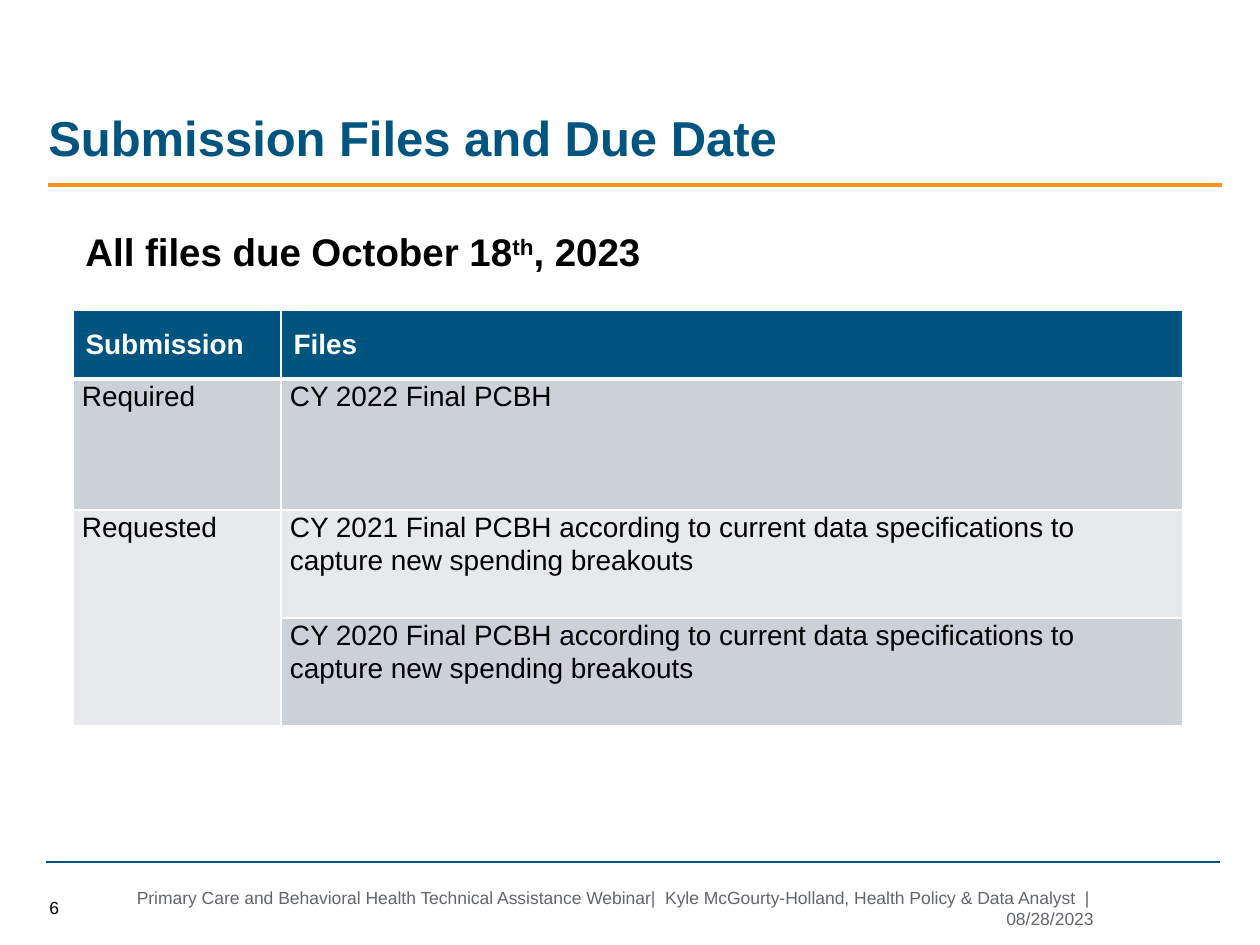
from dataclasses import dataclass

from lxml import etree
from pptx import Presentation
from pptx.dml.color import RGBColor
from pptx.enum.shapes import MSO_CONNECTOR
from pptx.enum.text import MSO_ANCHOR, PP_ALIGN
from pptx.oxml.ns import qn
from pptx.util import Emu, Pt

STRAIGHT = MSO_CONNECTOR.STRAIGHT
TOP, MIDDLE, BOTTOM = MSO_ANCHOR.TOP, MSO_ANCHOR.MIDDLE, MSO_ANCHOR.BOTTOM
LEFT, RIGHT = PP_ALIGN.LEFT, PP_ALIGN.RIGHT


@dataclass(frozen=True)
class Theme:
    font: str = "Arial"
    navy: str = "005480"
    orange: str = "F7921E"
    black: str = "000000"
    white: str = "FFFFFF"
    gray: str = "63666A"
    dark_band: str = "CCD1D8"
    light_band: str = "E7E9ED"
    title_size: int = 28
    due_size: int = 22
    table_size: int = 16
    footer_size: int = 10


THEME = Theme()

HEADERS = ["Submission", "Files"]
FILES = [
    ("Required", "CY 2022 Final PCBH"),
    ("Requested", "CY 2021 Final PCBH according to current data specifications "
                  "to capture new spending breakouts"),
    ("", "CY 2020 Final PCBH according to current data specifications "
         "to capture new spending breakouts"),
]
COLUMN_WIDTHS = [208, 902]
ROW_HEIGHTS = [69, 131, 108, 108]


def px(length):
    return Emu(round(length * 914400 / 126))


def style(paragraph, size, color, bold=False):
    font = paragraph.font
    font.name = THEME.font
    font.size = Pt(size)
    font.bold = bold
    font.color.rgb = RGBColor.from_string(color)


def add_text(slide, box, text, size, color, bold=False, anchor=TOP, align=LEFT):
    frame = slide.shapes.add_textbox(*map(px, box)).text_frame
    frame.word_wrap = True
    frame.vertical_anchor = anchor
    paragraph = frame.paragraphs[0]
    paragraph.alignment = align
    paragraph.add_run().text = text
    style(paragraph, size, color, bold)
    return paragraph


def add_rule(slide, left, right, y, color, width):
    rule = slide.shapes.add_connector(STRAIGHT, px(left), px(y), px(right), px(y))
    rule.line.color.rgb = RGBColor.from_string(color)
    rule.line.width = Pt(width)
    etree.SubElement(rule._element.spPr, qn("a:effectLst"))


def set_borders(cell, top=1, bottom=1):
    properties = cell._tc.get_or_add_tcPr()
    widths = {"lnL": 1, "lnR": 1, "lnT": top, "lnB": bottom}
    for position, (side, width) in enumerate(widths.items()):
        border = etree.Element(qn(f"a:{side}"), w=str(Pt(width)))
        fill = etree.SubElement(border, qn("a:solidFill"))
        etree.SubElement(fill, qn("a:srgbClr"), val=THEME.white)
        properties.insert(position, border)


def fill_cell(cell, text, band, color, bold=False):
    cell.fill.solid()
    cell.fill.fore_color.rgb = RGBColor.from_string(band)
    cell.text = text
    style(cell.text_frame.paragraphs[0], THEME.table_size, color, bold)


def fill_header(table):
    for column, heading in enumerate(HEADERS):
        cell = table.cell(0, column)
        fill_cell(cell, heading, THEME.navy, THEME.white, bold=True)
        cell.vertical_anchor = MIDDLE
        set_borders(cell, bottom=3)


def fill_body(table):
    bands = [THEME.dark_band, THEME.light_band]
    for row, texts in enumerate(FILES, start=1):
        for column, text in enumerate(texts):
            cell = table.cell(row, column)
            fill_cell(cell, text, bands[(row - 1) % 2], THEME.black)
            cell.margin_left = cell.margin_right = px(9)
            cell.margin_top = cell.margin_bottom = 0
            cell.text_frame.paragraphs[0].line_spacing = 1.07
            set_borders(cell, top=3 if row == 1 else 1)


def add_files_table(slide, left, top):
    table = slide.shapes.add_table(
        len(ROW_HEIGHTS), len(COLUMN_WIDTHS), px(left), px(top),
        px(sum(COLUMN_WIDTHS)), px(sum(ROW_HEIGHTS))).table
    table.horz_banding = False
    for column, width in zip(table.columns, COLUMN_WIDTHS):
        column.width = px(width)
    for row, height in zip(table.rows, ROW_HEIGHTS):
        row.height = px(height)
    fill_header(table)
    fill_body(table)
    table.cell(2, 0).merge(table.cell(3, 0))


def add_due_date(slide):
    due_date = add_text(slide, (73, 222, 630, 59), "All files due October 18",
                        THEME.due_size, THEME.black, bold=True)
    ordinal = due_date.add_run()
    ordinal.text = "th"
    ordinal.font._element.set("baseline", "30000")
    due_date.add_run().text = ", 2023"


def main():
    presentation = Presentation()
    presentation.slide_width = px(1260)
    presentation.slide_height = px(945)
    slide = presentation.slides.add_slide(presentation.slide_layouts[6])

    add_text(slide, (36, 101, 1106, 72), "Submission Files and Due Date",
             THEME.title_size, THEME.navy, bold=True, anchor=BOTTOM)
    add_rule(slide, 48, 1222, 185, THEME.orange, 2.25)
    add_due_date(slide)
    add_files_table(slide, 73, 310)
    add_rule(slide, 46, 1220, 862, THEME.navy, 0.75)
    add_text(slide, (37, 883, 73, 50), "6",
             THEME.footer_size, THEME.black, anchor=MIDDLE)
    add_text(slide, (110, 883, 996, 50),
             "Primary Care and Behavioral Health Technical Assistance Webinar|  "
             "Kyle McGourty-Holland, Health Policy & Data Analyst  |  08/28/2023",
             THEME.footer_size, THEME.gray, anchor=MIDDLE, align=RIGHT)

    presentation.save("out.pptx")


if __name__ == "__main__":
    main()
